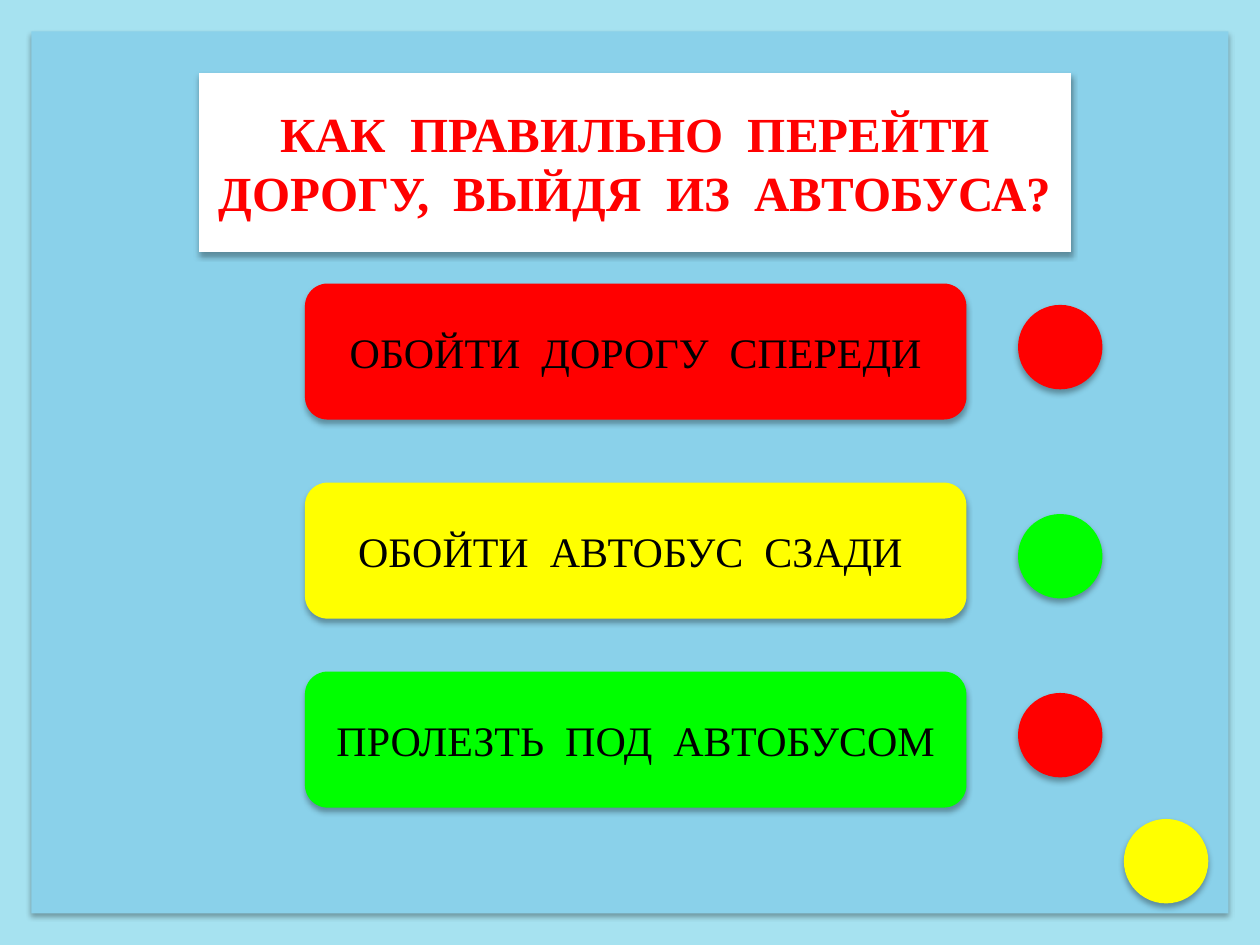
from lxml import etree
from pptx import Presentation
from pptx.dml.color import RGBColor
from pptx.enum import shapes, text
from pptx.oxml.ns import qn
from pptx.util import Inches, Pt

FONT = "Times New Roman"
FRAME = RGBColor(0xA6, 0xE2, 0xF0)
PANEL = RGBColor(0x8A, 0xD1, 0xEA)
WHITE = RGBColor(0xFF, 0xFF, 0xFF)
BLACK = RGBColor(0x00, 0x00, 0x00)
RED = RGBColor(0xFF, 0x00, 0x00)
YELLOW = RGBColor(0xFF, 0xFF, 0x00)
GREEN = RGBColor(0x00, 0xFF, 0x00)

RECT = shapes.MSO_SHAPE.RECTANGLE
ROUNDED = shapes.MSO_SHAPE.ROUNDED_RECTANGLE
OVAL = shapes.MSO_SHAPE.OVAL

QUESTION = "КАК  ПРАВИЛЬНО  ПЕРЕЙТИ ДОРОГУ,  ВЫЙДЯ  ИЗ  АВТОБУСА?"
# answer, its colour, top of its box, colour of its mark, top of the mark
ANSWERS = [
    ("ОБОЙТИ  ДОРОГУ  СПЕРЕДИ", RED, 2.25, RED, 2.42),
    ("ОБОЙТИ  АВТОБУС  СЗАДИ ", YELLOW, 3.83, GREEN, 4.08),
    ("ПРОЛЕЗТЬ  ПОД  АВТОБУСОМ", GREEN, 5.33, RED, 5.5),
]


def style_shape(sp, color):
    """Fill without outline, over a soft shadow that falls straight down."""
    sp.fill.solid()
    sp.fill.fore_color.rgb = color
    sp.line.fill.background()
    sp.shadow.inherit = False
    effects = sp._element.spPr.find(qn("a:effectLst"))
    shadow = etree.SubElement(
        effects, qn("a:outerShdw"), blurRad=str(Pt(3.5)), dist=str(Pt(2.2)),
        dir="5400000", rotWithShape="0")
    black = etree.SubElement(shadow, qn("a:srgbClr"), val="000000")
    etree.SubElement(black, qn("a:alpha"), val="32000")


def add_shape(s, kind, left, top, width, height, color):
    sp = s.shapes.add_shape(
        kind, Inches(left), Inches(top), Inches(width), Inches(height))
    style_shape(sp, color)
    return sp


def set_text(sp, words, size, color, bold=False):
    tf = sp.text_frame
    tf.text = words
    tf.word_wrap = True
    tf.auto_size = text.MSO_AUTO_SIZE.NONE
    tf.vertical_anchor = text.MSO_ANCHOR.MIDDLE
    p = tf.paragraphs[0]
    p.alignment = text.PP_ALIGN.CENTER
    font = p.runs[0].font
    font.name, font.size, font.bold = FONT, Pt(size), bold
    font.color.rgb = color


def place_title(s):
    title = s.shapes.title
    title.left, title.top = Inches(1.58), Inches(0.58)
    title.width, title.height = Inches(6.92), Inches(1.42)
    style_shape(title, WHITE)
    set_text(title, QUESTION, 28, RED, bold=True)
    s.shapes._spTree.append(title._element)  # in front of the panel


def add_mark(s, left, top, color):
    add_shape(s, OVAL, left, top, 0.67, 0.67, color)


def add_answer(s, words, color, top):
    sp = add_shape(s, ROUNDED, 2.42, top, 5.25, 1.08, color)
    set_text(sp, words, 24, BLACK)


def main():
    prs = Presentation()
    prs.slide_width, prs.slide_height = Inches(10), Inches(7.5)
    s = prs.slides.add_slide(prs.slide_layouts[5])
    add_shape(s, RECT, 0, 0, 10, 7.5, FRAME)
    add_shape(s, RECT, 0.25, 0.25, 9.5, 7, PANEL)
    place_title(s)
    for words, color, top, mark_color, mark_top in ANSWERS:
        add_answer(s, words, color, top)
        add_mark(s, 8.08, mark_top, mark_color)
    add_mark(s, 8.92, 6.5, YELLOW)
    prs.save("out.pptx")


if __name__ == "__main__":
    main()
